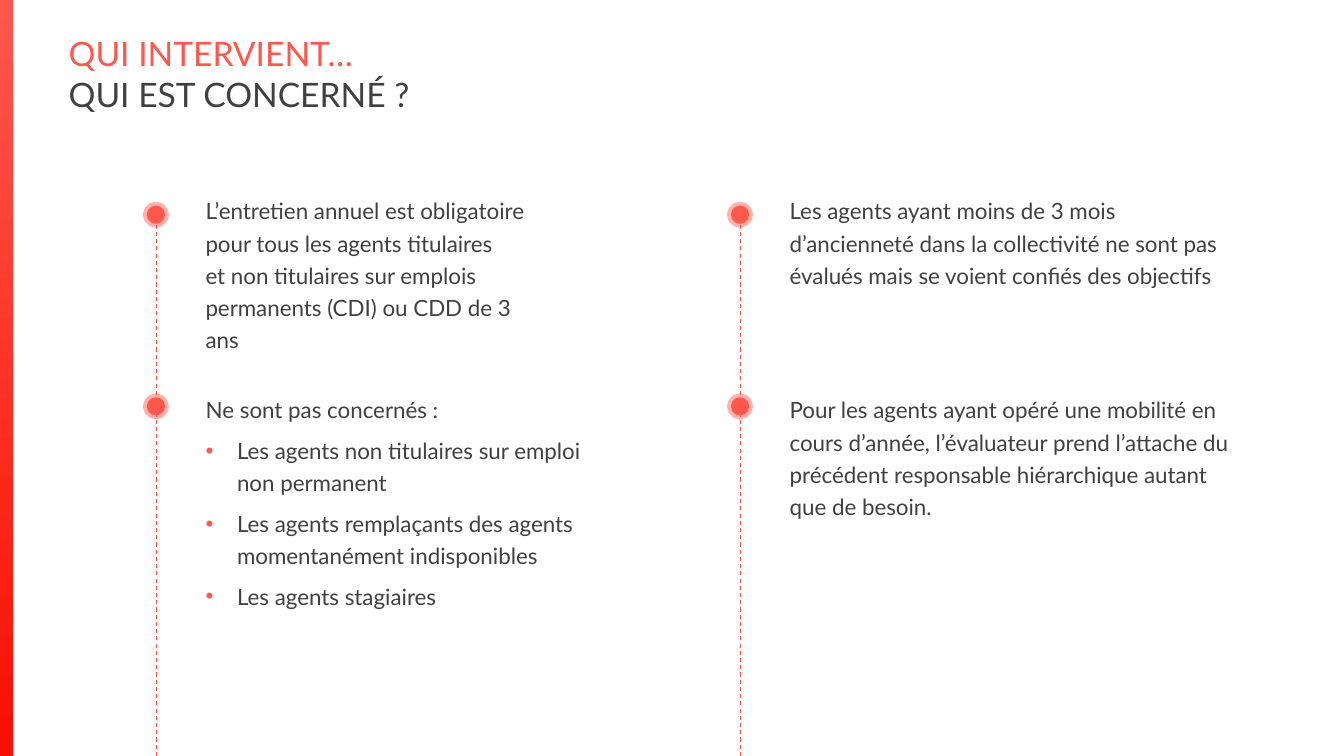
from dataclasses import dataclass

from lxml.etree import SubElement
from pptx import Presentation
from pptx.dml.color import RGBColor
from pptx.enum.dml import MSO_LINE
from pptx.enum.shapes import MSO_CONNECTOR, MSO_SHAPE
from pptx.enum.text import MSO_ANCHOR, MSO_AUTO_SIZE, PP_ALIGN
from pptx.oxml.ns import qn
from pptx.util import Cm, Pt


@dataclass(frozen=True)
class Theme:
    font: str = "Lato"
    coral: RGBColor = RGBColor(0xFF, 0x57, 0x4C)
    red: RGBColor = RGBColor(0xF8, 0x0F, 0x00)
    line: RGBColor = RGBColor(0xFE, 0x51, 0x46)
    text: RGBColor = RGBColor(0x40, 0x40, 0x40)
    title_size: Pt = Pt(24)
    body_size: Pt = Pt(16)


theme = Theme()


def fill_gradient(fill):
    """Coral at the top, red at the bottom."""
    fill.gradient()
    fill.gradient_angle = 270
    for stop, color in zip(fill.gradient_stops, (theme.coral, theme.red)):
        stop.color.rgb = color


def write_text(box, lines, size, spacing):
    """Fill a box with left-aligned paragraphs in the slide's font."""
    frame = box.text_frame
    frame.word_wrap = True
    frame.auto_size = MSO_AUTO_SIZE.NONE
    frame.vertical_anchor = MSO_ANCHOR.TOP
    for number, line in enumerate(lines):
        para = frame.add_paragraph() if number else frame.paragraphs[0]
        para.text = line
        para.alignment = PP_ALIGN.LEFT
        para.line_spacing = spacing
        para.space_before = Pt(0)
        for span in para.runs:
            span.font.name = theme.font
            span.font.size = size
            span.font.color.rgb = theme.text


deck = Presentation()
deck.slide_width, deck.slide_height = Cm(33.87), Cm(19.05)
page = deck.slides.add_slide(deck.slide_layouts[1])

# Title
title = page.shapes.title
title.left, title.top, title.width, title.height = Cm(1.73), Cm(0.71), Cm(14.81), Cm(2.31)
write_text(title, ["QUI INTERVIENT…", "QUI EST CONCERNÉ ?"], theme.title_size, 1.0)
title.text_frame.margin_left = 0
fill_gradient(title.text_frame.paragraphs[0].runs[0].font.fill)

# Side band
band = page.shapes.add_shape(MSO_SHAPE.RECTANGLE, 0, 0, Cm(0.33), deck.slide_height)
band.shadow.inherit = False
band.line.fill.background()
fill_gradient(band.fill)

# Two timelines, each a dashed line with two dots
column_step = 14.72
dot_size = 0.46
for column in range(2):
    shift = column * column_step
    line_x = Cm(3.94 + shift)
    line = page.shapes.add_connector(
        MSO_CONNECTOR.STRAIGHT, line_x, deck.slide_height, line_x, Cm(5.54))
    line.line.color.rgb = theme.line
    line.line.width = Pt(0.75)
    line.line.dash_style = MSO_LINE.DASH
    SubElement(line._element.spPr, qn("a:effectLst"))
    for dot_top in (5.18, 10.01):
        dot = page.shapes.add_shape(
            MSO_SHAPE.OVAL, Cm(3.7 + shift), Cm(dot_top), Cm(dot_size), Cm(dot_size))
        dot.shadow.inherit = False
        dot.fill.solid()
        dot.fill.fore_color.rgb = theme.coral
        dot.line.color.rgb = theme.coral
        dot.line.width = Pt(5.5)
        halo = dot.line._ln.find(".//" + qn("a:srgbClr"))
        SubElement(halo, qn("a:alpha"), val="46000")

# Plain texts beside the dots: column, top, width, height, wording
notes = [
    (0, 4.72, 9.07, 3.53,
     "L’entretien annuel est obligatoire pour tous les agents titulaires\n"
     "et non titulaires sur emplois permanents (CDI) ou CDD de 3 ans"),
    (1, 4.72, 11.48, 2.64,
     "Les agents ayant moins de 3 mois d’ancienneté dans la collectivité ne sont pas "
     "évalués mais se voient confiés des objectifs"),
    (1, 9.73, 11.61, 3.53,
     "Pour les agents ayant opéré une mobilité en cours d’année, l’évaluateur prend "
     "l’attache du précédent responsable hiérarchique autant que de besoin."),
]
text_left = 4.93
for column, top, width, height, wording in notes:
    box = page.shapes.add_textbox(
        Cm(text_left + column * column_step), Cm(top), Cm(width), Cm(height))
    write_text(box, [wording], theme.body_size, 1.2)

# List of the agents not concerned
body = page.placeholders[1]
body.left, body.top, body.width, body.height = Cm(text_left), Cm(9.73), Cm(10.11), Cm(5.74)
write_text(body, [
    "Ne sont pas concernés :",
    "Les agents non titulaires sur emploi\nnon permanent",
    "Les agents remplaçants des agents momentanément indisponibles",
    "Les agents stagiaires",
], theme.body_size, 1.2)
intro, *items = body.text_frame.paragraphs
intro_props = intro._p.get_or_add_pPr()
intro_props.set("marL", "0")
intro_props.set("indent", "0")
SubElement(intro_props, qn("a:buNone"))
for item in items:
    item.space_before = Pt(6)
    props = item._p.get_or_add_pPr()
    props.set("marL", str(Cm(0.79)))
    props.set("indent", str(-Cm(0.79)))
    bullet_color = SubElement(props, qn("a:buClr"))
    SubElement(bullet_color, qn("a:srgbClr"), val=str(theme.coral))
    SubElement(props, qn("a:buFont"), typeface="Arial")
    SubElement(props, qn("a:buChar"), char="•")

deck.save("out.pptx")
